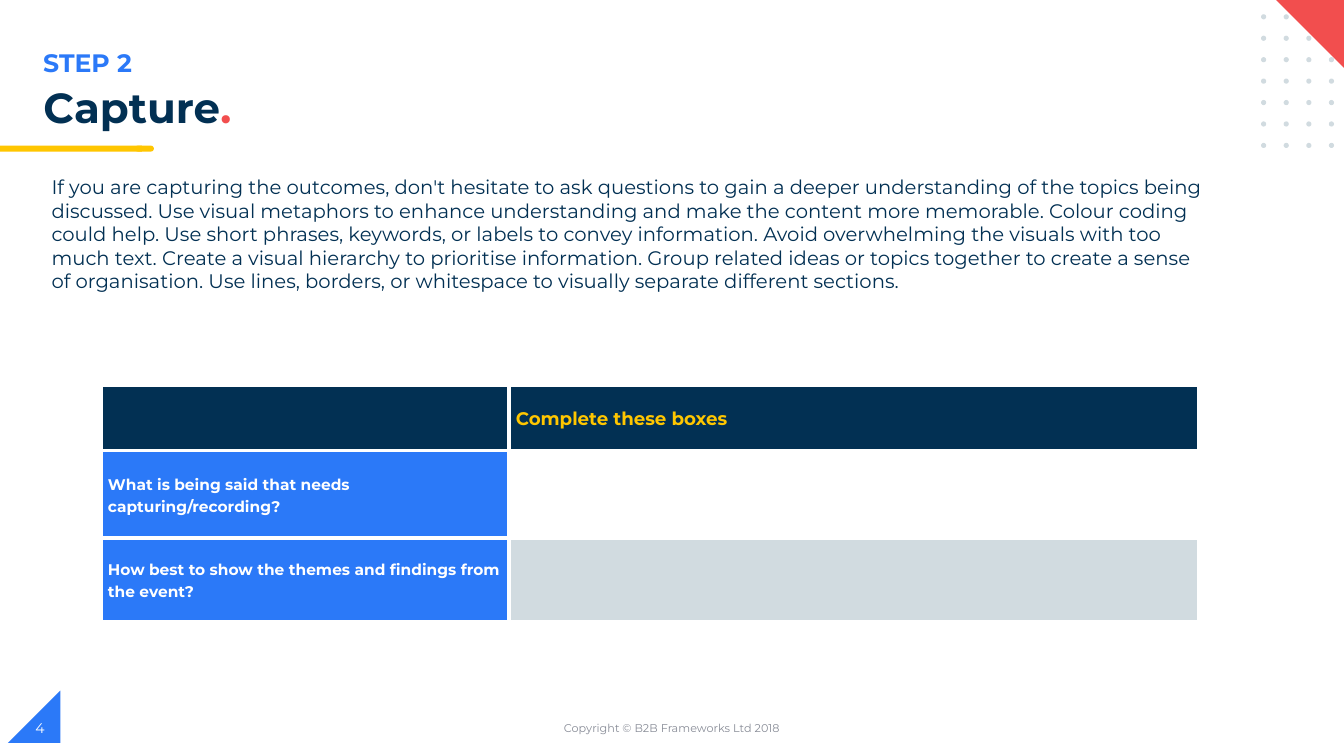
from dataclasses import dataclass

from lxml import etree
from pptx import Presentation
from pptx.dml.color import RGBColor
from pptx.enum import shapes, text
from pptx.oxml import ns
from pptx.util import Cm, Pt


@dataclass(frozen=True)
class Theme:
    font: str = "Montserrat"
    navy: str = "023053"
    blue: str = "2B79F8"
    yellow: str = "FFC600"
    red: str = "F24E4E"
    mist: str = "D1DBE0"
    grey: str = "888C97"
    white: str = "FFFFFF"
    title_size: int = 30
    step_size: int = 18
    body_size: int = 14
    header_size: int = 13
    cell_size: int = 11
    number_size: int = 10
    footer_size: int = 8
    border_width: int = 3


class SlideBuilder:
    def __init__(self, page, theme):
        self.page = page
        self.theme = theme

    def format_span(self, span, size, color, bold=False):
        font = span.font
        font.name = self.theme.font
        font.size = Pt(size)
        font.bold = bold
        font.color.rgb = RGBColor.from_string(color)

    def shape(self, kind, left, top, width, height, color, rotation=0):
        item = self.page.shapes.add_shape(kind, Cm(left), Cm(top), Cm(width), Cm(height))
        item.shadow.inherit = False
        item.fill.solid()
        item.fill.fore_color.rgb = RGBColor.from_string(color)
        item.line.fill.background()
        item.rotation = rotation

    def text(self, wording, left, top, width, height, size, color, bold=False,
             align=text.PP_ALIGN.LEFT, anchor=text.MSO_ANCHOR.TOP):
        box = self.page.shapes.add_textbox(Cm(left), Cm(top), Cm(width), Cm(height))
        frame = box.text_frame
        frame.word_wrap = True
        frame.vertical_anchor = anchor
        frame.text = wording
        para = frame.paragraphs[0]
        para.alignment = align
        self.format_span(para.runs[0], size, color, bold)

    def title(self, wording, mark, left, top, width, height):
        box = self.page.shapes.title
        box.left, box.top, box.width, box.height = Cm(left), Cm(top), Cm(width), Cm(height)
        frame = box.text_frame
        frame.auto_size = text.MSO_AUTO_SIZE.NONE
        frame.vertical_anchor = text.MSO_ANCHOR.TOP
        para = frame.paragraphs[0]
        para.text = wording
        para.alignment = text.PP_ALIGN.LEFT
        para.line_spacing = 0.9
        para.add_run().text = mark
        for span, color in zip(para.runs, (self.theme.navy, self.theme.red)):
            self.format_span(span, self.theme.title_size, color, True)

    def dots(self, left, top, columns, rows, step_x, step_y, size):
        for row in range(rows):
            for column in range(columns):
                self.shape(shapes.MSO_SHAPE.OVAL, left + column * step_x,
                           top + row * step_y, size, size, self.theme.mist)

    def cell_borders(self, cell):
        properties = cell._tc.get_or_add_tcPr()
        for side in ("a:lnL", "a:lnR", "a:lnT", "a:lnB"):
            line = etree.SubElement(properties, ns.qn(side),
                                    w=str(int(Pt(self.theme.border_width))))
            fill = etree.SubElement(line, ns.qn("a:solidFill"))
            etree.SubElement(fill, ns.qn("a:srgbClr"), val=self.theme.white)

    def cell(self, cell, wording, fill, size, color):
        self.cell_borders(cell)
        cell.fill.solid()
        cell.fill.fore_color.rgb = RGBColor.from_string(fill)
        cell.margin_left = cell.margin_right = Cm(0.18)
        cell.margin_top = cell.margin_bottom = 0
        cell.vertical_anchor = text.MSO_ANCHOR.MIDDLE
        if wording:
            cell.text_frame.text = wording
            para = cell.text_frame.paragraphs[0]
            para.line_spacing = 1.15
            self.format_span(para.runs[0], size, color, True)

    def table(self, left, top, widths, heights, rows):
        frame = self.page.shapes.add_table(len(heights), len(widths), Cm(left), Cm(top),
                                           Cm(sum(widths)), Cm(sum(heights)))
        grid = frame.table
        for column, width in zip(grid.columns, widths):
            column.width = Cm(width)
        for row, height, (contents, fills, size, color) in zip(grid.rows, heights, rows):
            row.height = Cm(height)
            for cell, wording, fill in zip(row.cells, contents, fills):
                self.cell(cell, wording, fill, size, color)


def main():
    theme = Theme()
    deck = Presentation()
    deck.slide_width, deck.slide_height = Cm(33.87), Cm(19.05)
    page = deck.slides.add_slide(deck.slide_layouts.get_by_name("Title Only"))
    builder = SlideBuilder(page, theme)
    kinds = shapes.MSO_SHAPE

    # Corner decorations
    builder.shape(kinds.RIGHT_TRIANGLE, 0.2, 17.4, 1.32, 1.32, theme.blue, 270)
    builder.dots(31.78, 0.36, columns=4, rows=7, step_x=0.57, step_y=0.54, size=0.13)
    builder.shape(kinds.RIGHT_TRIANGLE, 32.13, -0.03, 1.83, 1.83, theme.red, 180)

    # Heading with its underline
    builder.text("STEP 2", 0.84, 1.07, 17, 1.02, theme.step_size, theme.blue, True)
    builder.title("Capture", ".", 0.84, 2.08, 28.32, 1.42)
    builder.shape(kinds.FLOWCHART_TERMINATOR, 3.4, 3.67, 0.48, 0.15, theme.yellow)
    builder.shape(kinds.RECTANGLE, 0, 3.67, 3.58, 0.15, theme.yellow)

    # Guidance
    builder.text(
        "If you are capturing the outcomes, don't hesitate to ask questions to gain a deeper "
        "understanding of the topics being discussed. Use visual metaphors to enhance "
        "understanding and make the content more memorable. Colour coding could help. Use "
        "short phrases, keywords, or labels to convey information. Avoid overwhelming the "
        "visuals with too much text. Create a visual hierarchy to prioritise information. "
        "Group related ideas or topics together to create a sense of organisation. Use lines, "
        "borders, or whitespace to visually separate different sections.",
        1.05, 4.29, 29.74, 3.25, theme.body_size, theme.navy)

    # Worksheet table
    builder.table(2.54, 9.7, widths=(10.28, 17.38), heights=(1.65, 2.21, 2.1), rows=[
        (("", "Complete these boxes"),
         (theme.navy, theme.navy), theme.header_size, theme.yellow),
        (("What is being said that needs capturing/recording?", ""),
         (theme.blue, theme.white), theme.cell_size, theme.white),
        (("How best to show the themes and findings from the event?", ""),
         (theme.blue, theme.mist), theme.cell_size, theme.white),
    ])

    # Footer
    middle = text.MSO_ANCHOR.MIDDLE
    builder.text("Copyright © B2B Frameworks Ltd 2018", 11.22, 17.83, 11.43, 1.02,
                 theme.footer_size, theme.grey, align=text.PP_ALIGN.CENTER, anchor=middle)
    builder.text("4", 0.64, 17.83, 7.62, 1.02, theme.number_size, theme.white, anchor=middle)

    deck.save("out.pptx")


if __name__ == "__main__":
    main()
